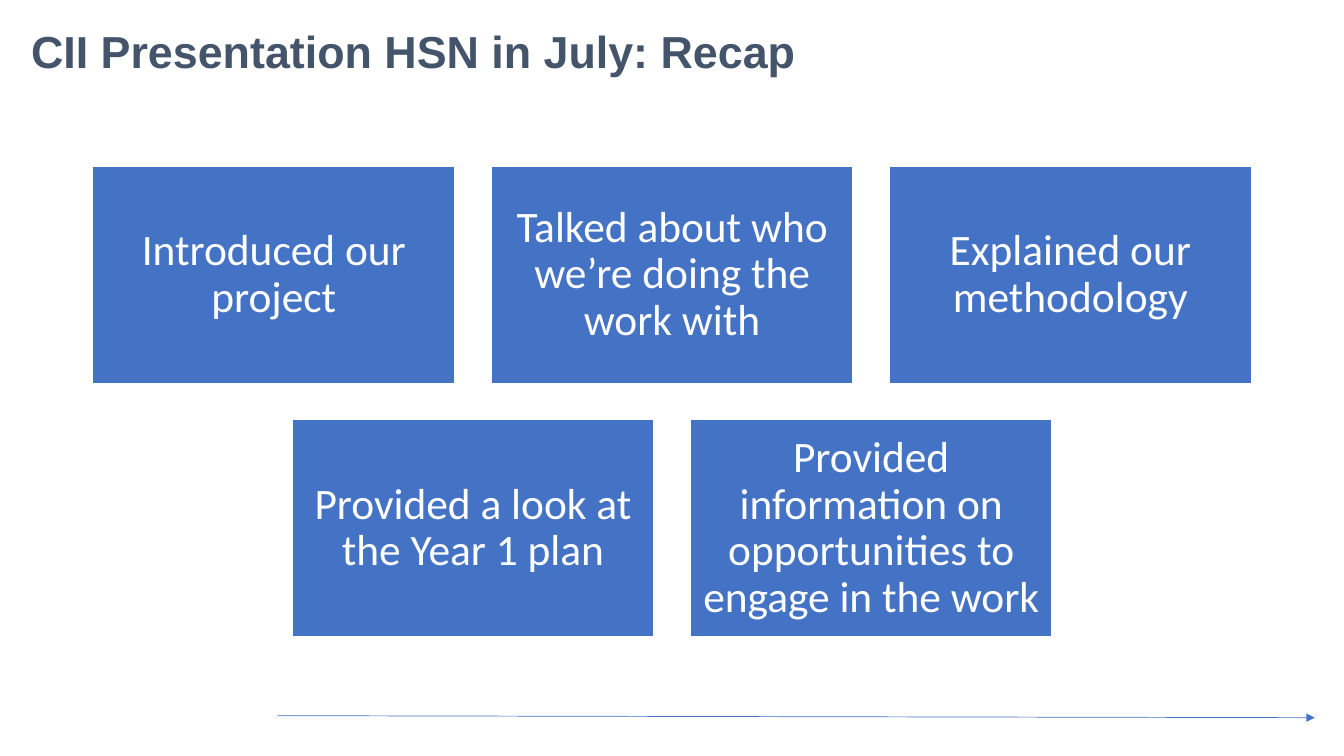
from lxml.etree import SubElement
from pptx import Presentation
from pptx.dml.color import RGBColor
from pptx.enum.shapes import MSO_CONNECTOR, MSO_SHAPE
from pptx.enum.text import MSO_ANCHOR, PP_ALIGN
from pptx.oxml.ns import qn
from pptx.util import Pt

EMU_PER_PX = 9144
BLUE = RGBColor(0x44, 0x72, 0xC4)
SLATE = RGBColor(0x44, 0x54, 0x6A)
WHITE = RGBColor(0xFF, 0xFF, 0xFF)

RECAP_ROWS = [
    [
        "Introduced our project",
        "Talked about who we’re doing the work with",
        "Explained our methodology",
    ],
    [
        "Provided a look at the Year 1 plan",
        "Provided information on opportunities to engage in the work",
    ],
]


def px(length):
    return round(length * EMU_PER_PX)


def add_footer_arrow(slide, left, top, width, height):
    arrow = slide.shapes.add_connector(
        MSO_CONNECTOR.STRAIGHT,
        px(left), px(top), px(left + width), px(top + height),
    )
    arrow.line.color.rgb = BLUE
    arrow.line.width = Pt(0.5)
    SubElement(arrow.line._get_or_add_ln(), qn("a:tailEnd"), type="triangle")
    SubElement(arrow._element.spPr, qn("a:effectLst"))


def add_title(slide, left, top, width, height):
    title = slide.shapes.add_textbox(px(left), px(top), px(width), px(height))
    frame = title.text_frame
    frame.word_wrap = True
    frame.vertical_anchor = MSO_ANCHOR.MIDDLE
    heading = frame.paragraphs[0]
    heading.text = "CII Presentation HSN in July: Recap"
    heading.line_spacing = 0.9
    heading.font.name = "Arial"
    heading.font.size = Pt(32)
    heading.font.bold = True
    heading.font.color.rgb = SLATE


def add_recap_card(slide, message, left, top, width, height):
    card = slide.shapes.add_shape(
        MSO_SHAPE.RECTANGLE, px(left), px(top), px(width), px(height)
    )
    card.shadow.inherit = False
    card.fill.solid()
    card.fill.fore_color.rgb = BLUE
    card.line.color.rgb = WHITE
    card.line.width = Pt(1)
    frame = card.text_frame
    frame.word_wrap = True
    frame.vertical_anchor = MSO_ANCHOR.MIDDLE
    frame.margin_left = frame.margin_right = px(13)
    frame.margin_top = frame.margin_bottom = px(13)
    paragraph = frame.paragraphs[0]
    paragraph.text = message
    paragraph.alignment = PP_ALIGN.CENTER
    paragraph.line_spacing = 0.9
    paragraph.font.name = "Calibri"
    paragraph.font.size = Pt(31)
    paragraph.font.color.rgb = WHITE


def add_recap_grid(slide, left, top, width, height):
    gap = 36
    columns = max(len(row) for row in RECAP_ROWS)
    card_width = (width - gap * (columns - 1)) / columns
    card_height = (height - gap * (len(RECAP_ROWS) - 1)) / len(RECAP_ROWS)
    for row_index, messages in enumerate(RECAP_ROWS):
        indent = (columns - len(messages)) * (card_width + gap) / 2
        for column, message in enumerate(messages):
            add_recap_card(
                slide,
                message,
                left + indent + column * (card_width + gap),
                top + row_index * (card_height + gap),
                card_width,
                card_height,
            )


def main():
    presentation = Presentation()
    presentation.slide_width = px(1333)
    presentation.slide_height = px(750)
    slide = presentation.slides.add_slide(presentation.slide_layouts[6])
    add_footer_arrow(slide, 275, 710, 1029, 2)
    add_title(slide, 21, 21, 806, 65)
    add_recap_grid(slide, 92, 165, 1149, 467)
    presentation.save("out.pptx")


if __name__ == "__main__":
    main()
